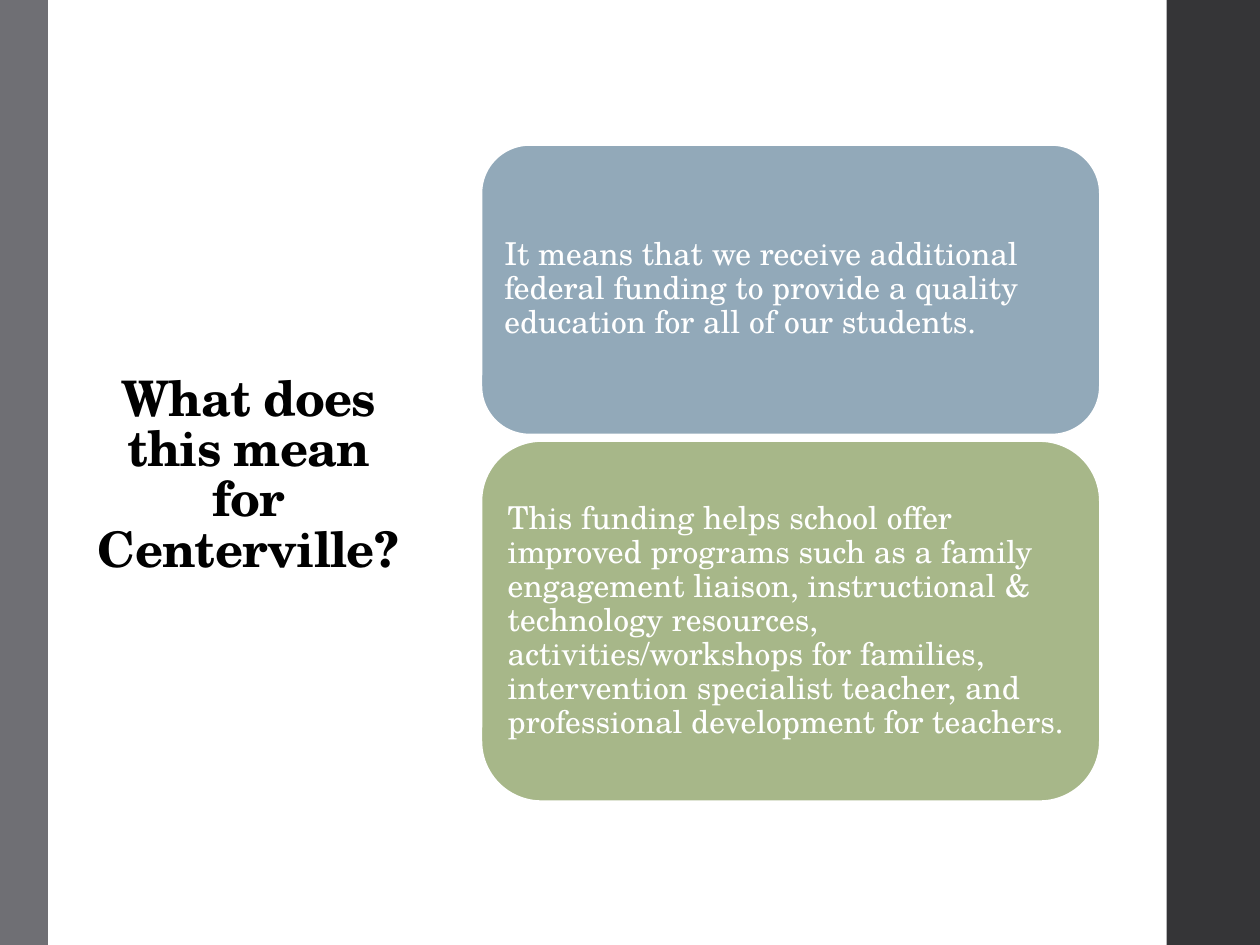
from pptx import Presentation
from pptx.dml.color import RGBColor as Rgb
from pptx.enum.shapes import MSO_SHAPE as Shape
from pptx.enum.text import MSO_ANCHOR as Anchor, PP_ALIGN as Align
from pptx.util import Inches, Pt

FONT = "TeX Gyre Schola"
HUES = {
    "white": "FFFFFF",
    "black": "000000",
    "dark": "353537",
    "gray": "6F6F74",
    "blue": "92A9B9",
    "green": "A7B789",
}
CARDS = [
    (1.15, 2.3, "blue",
     "It means that we receive additional federal funding to provide "
     "a quality education for all of our students."),
    (3.5, 2.86, "green",
     "This funding helps school offer improved programs such as a family "
     "engagement liaison, instructional & technology resources, "
     "activities/workshops for families, intervention specialist teacher, "
     "and professional development for teachers."),
]


class Deck:
    def __init__(self, wide, high):
        self.show = Presentation()
        self.show.slide_width = Inches(wide)
        self.show.slide_height = Inches(high)
        self.slide = self.show.slides.add_slide(self.show.slide_layouts[5])

    def hue(self, name):
        return Rgb.from_string(HUES[name])

    def label(self, frame, text, size, hue, align, lead, bold=False):
        frame.word_wrap = True
        para = frame.paragraphs[0]
        para.text = text
        para.alignment = align
        para.line_spacing = lead
        font = para.font
        font.name, font.size, font.bold = FONT, Pt(size), bold
        font.color.rgb = self.hue(hue)
        return para

    def title(self, text, left, top, wide, high):
        box = self.slide.shapes.title
        box.left, box.top = Inches(left), Inches(top)
        box.width, box.height = Inches(wide), Inches(high)
        frame = box.text_frame
        frame.vertical_anchor = Anchor.BOTTOM
        para = self.label(frame, text, 28, "black", Align.CENTER, 0.85, True)
        para.runs[0]._r.get_or_add_rPr().set("spc", "-50")

    def block(self, left, top, wide, high, hue, kind=Shape.RECTANGLE):
        box = self.slide.shapes.add_shape(
            kind, Inches(left), Inches(top), Inches(wide), Inches(high))
        box.shadow.inherit = False
        box.fill.solid()
        box.fill.fore_color.rgb = self.hue(hue)
        box.line.fill.background()
        return box

    def card(self, left, top, wide, high, hue, text):
        box = self.block(left, top, wide, high, hue, Shape.ROUNDED_RECTANGLE)
        box.line.color.rgb = self.hue("white")
        box.line.width = Pt(1.1)
        frame = box.text_frame
        frame.margin_left = frame.margin_right = Inches(0.07)
        frame.margin_top = frame.margin_bottom = Inches(0.07)
        frame.vertical_anchor = Anchor.MIDDLE
        self.label(frame, text, 18, "white", Align.LEFT, 0.9)


def main():
    deck = Deck(10, 7.5)
    deck.block(9.21, 0, 0.79, 7.5, "dark")
    deck.block(0, 0, 0.38, 7.5, "gray")
    deck.block(3.33, 0, 5.93, 7.5, "white")
    deck.title("What does this mean for Centerville?", 0.62, 0.7, 2.7, 3.93)
    for top, high, hue, text in CARDS:
        deck.card(3.82, top, 4.91, high, hue, text)
    deck.show.save("out.pptx")


if __name__ == "__main__":
    main()
